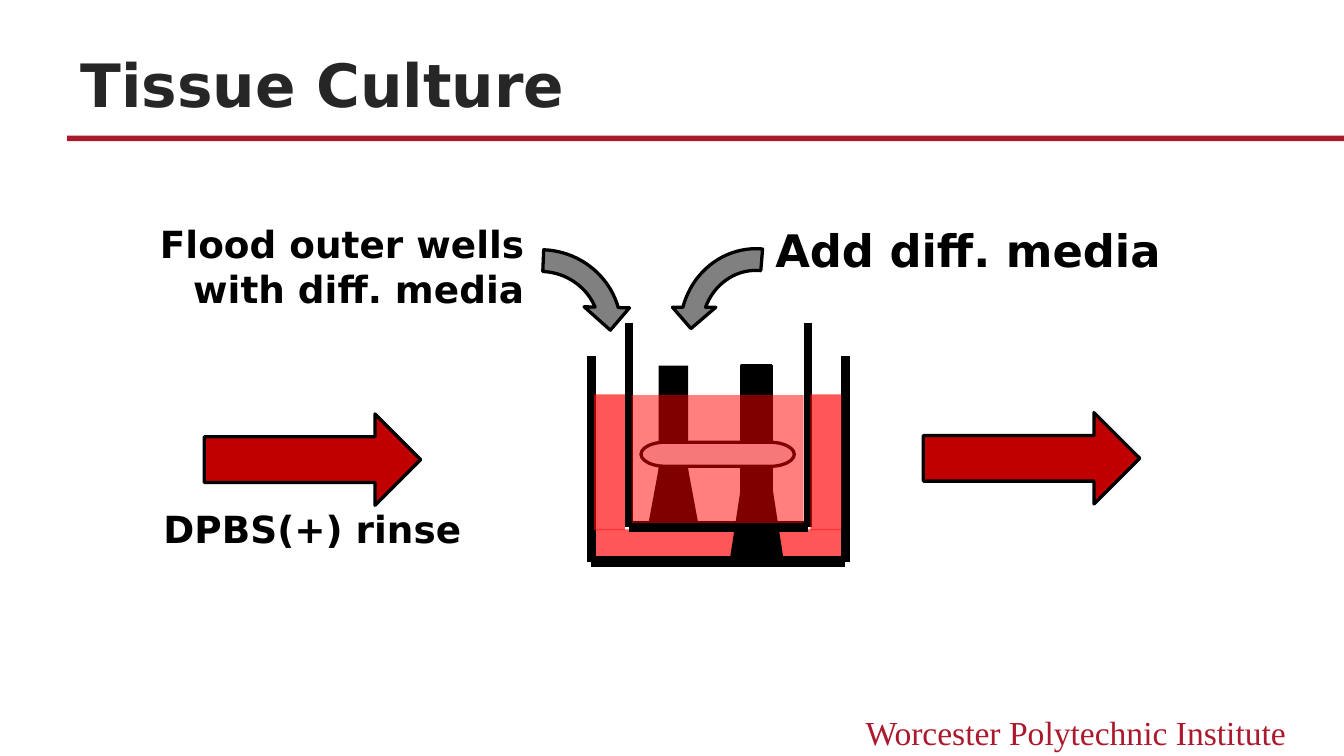
"""Build the tissue culture slide: a nested well between two process arrows."""
from lxml.etree import SubElement as Sub
from pptx import Presentation
from pptx.dml.color import RGBColor as Rgb
from pptx.enum.shapes import MSO_CONNECTOR as Link, MSO_SHAPE as Form
from pptx.enum.text import MSO_ANCHOR as Anchor, PP_ALIGN as Align
from pptx.oxml.ns import qn
from pptx.util import Inches, Pt

HUES = {
    "brand": "AB192D", "title": "262626", "ink": "000000", "media": "FF0000",
    "step": "C00000", "tissue": "F0F1F1", "pour": "808080",
}
COLS, ROWS = 100, 56.25

deck = Presentation()
deck.slide_width = Inches(10)
deck.slide_height = deck.slide_width * 9 // 16
col, row = deck.slide_width / COLS, deck.slide_height / ROWS
slide = deck.slides.add_slide(deck.slide_layouts[6])
shapes = slide.shapes


def draw(form, box, hue, edge=False, alpha=None):
    x, y, w, h = box
    shape = shapes.add_shape(form, int(x * col), int(y * row), int(w * col), int(h * row))
    shape.shadow.inherit = False
    shape.fill.solid()
    shape.fill.fore_color.rgb = Rgb.from_string(HUES[hue])
    if edge:
        shape.line.color.rgb = Rgb.from_string(HUES["ink"])
        shape.line.width = Pt(1.75)
    else:
        shape.line.fill.background()
    if alpha:
        tint = shape.element.spPr.find(qn("a:solidFill"))[0]
        Sub(tint, qn("a:alpha"), val=str(alpha * 1000))
    return shape


def write(words, box, size, hue="ink", align=Align.LEFT, font="DejaVu Sans",
          bold=True, wrap=True, anchor=Anchor.TOP):
    x, y, w, h = box
    frame = shapes.add_textbox(int(x * col), int(y * row), int(w * col), int(h * row)).text_frame
    frame.word_wrap, frame.vertical_anchor = wrap, anchor
    para = frame.paragraphs[0]
    para.alignment = align
    run = para.add_run()
    run.text = words
    for key, value in {"name": font, "size": Pt(size), "bold": bold}.items():
        setattr(run.font, key, value)
    run.font.color.rgb = Rgb.from_string(HUES[hue])


draw(Form.RECTANGLE, (5, 10.1, 95, 0.4), "brand")
write("Worcester Polytechnic Institute", (60, 52.5, 36.7, 4), 18, "brand",
      Align.RIGHT, "Times New Roman", bold=False)
write("Tissue Culture", (5, 2.8, 90, 6.6), 32, "title", anchor=Anchor.BOTTOM)

draw(Form.RECTANGLE, (44, 39.4, 18.6, 2.3), "media", alpha=66)

posts = [
    ((54.4, 35.6, 3.8, 6.2), (55.2, 27.2, 2.2, 10.5), True),
    ((48.2, 34.1, 3.8, 5.1), (49, 27.2, 2.2, 8.6), False),
]
wells = [(44, 62.9, 26.5, 41.8), (46.8, 60.1, 24, 39.2)]
for (foot, stem, edge), (left, right, top, base) in zip(posts, wells):
    draw(Form.TRAPEZOID, foot, "ink", edge)
    draw(Form.RECTANGLE, stem, "ink", edge)
    walls = [
        (left, top, left, base, 4.5),
        (right, base, left, base, 6),
        (right, base, right, top, 4.5),
    ]
    for x, y, end, low, width in walls:
        wall = shapes.add_connector(Link.STRAIGHT, int(x * col), int(y * row),
                                    int(end * col), int(low * row))
        wall.line.color.rgb = Rgb.from_string(HUES["ink"])
        wall.line.width = Pt(width)
        Sub(wall.element.spPr, qn("a:effectLst"))

draw(Form.FLOWCHART_TERMINATOR, (47.7, 32.9, 11.4, 1.8), "tissue", True)
draw(Form.RECTANGLE, (47, 29.4, 12.8, 9.5), "media", alpha=50)
for left in (56.4, 40.3):
    side = draw(Form.RECTANGLE, (left, 33.25, 10.1, 2.3), "media", alpha=66)
    side.rotation = 90

pours = [
    ((33.3, 17.7, 13.8, 13.5), (0.12, 11.423, 205.36, 163.502, 0.125), False),
    ((49.8, 17.7, 12.9, 13.5), (0.125, 11.423, 204.577, 159.152, 0.125), True),
]
for box, bends, flip in pours:
    pour = draw(Form.CIRCULAR_ARROW, box, "pour", True)
    for spot, bend in enumerate(bends):
        pour.adjustments[spot] = bend
    if flip:
        pour.element.spPr.xfrm.set("flipH", "1")

for left, top in ((15.2, 30.8), (68.7, 30.7)):
    draw(Form.RIGHT_ARROW, (left, top, 16.1, 6.8), "step", True)

write("DPBS(+) rinse", (8.1, 37.2, 30.3, 4.5), 20, align=Align.CENTER)
write("Flood outer wells with diff. media", (5.8, 16, 34.2, 11.3), 20, align=Align.RIGHT)
write("Add diff. media", (56.7, 16.1, 30.8, 5), 24, wrap=False)

deck.save("out.pptx")
